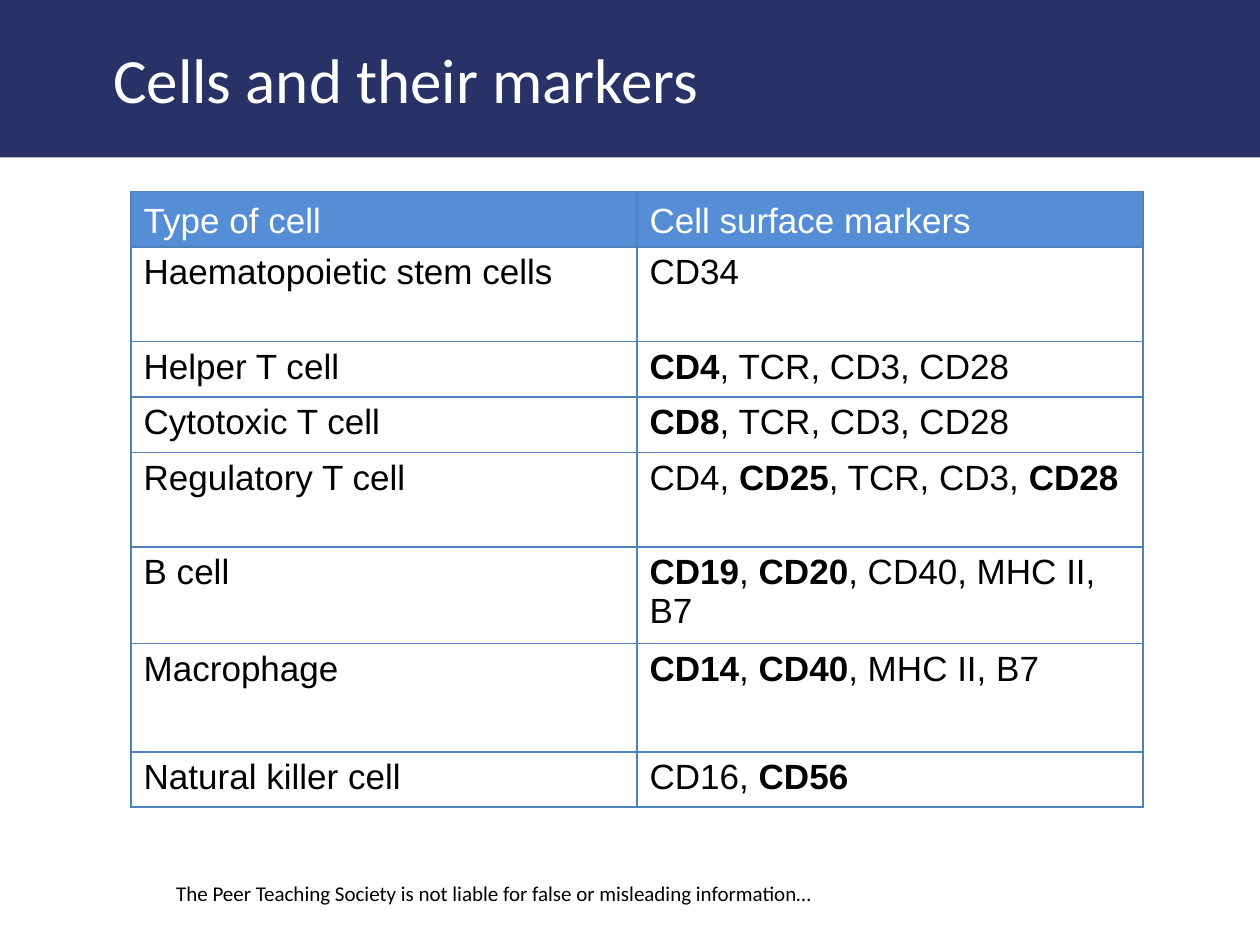
from dataclasses import dataclass

from lxml.etree import SubElement
from pptx import Presentation
from pptx.dml.color import RGBColor
from pptx.enum.shapes import MSO_SHAPE
from pptx.enum.text import MSO_ANCHOR
from pptx.oxml.ns import qn
from pptx.slide import Slide
from pptx.table import Table, _Cell
from pptx.text.text import Font
from pptx.util import Inches, Pt

COLORS = {
    "banner": "293267",
    "header": "558ED5",
    "border": "4F81BD",
    "light": "FFFFFF",
    "dark": "000000",
}
BOLD_MARK = "*"


@dataclass
class Label:
    text: str
    left: float
    top: float
    width: float
    height: float
    size: int
    color: str


@dataclass
class CellType:
    name: str
    markers: str
    height: float = 0.44


LABELS = [
    Label("The Peer Teaching Society is not liable for false or misleading information…",
          1.3, 6.94, 5.54, 0.3, 12, "dark"),
    Label("Cells and their markers", 0.8, 0.27, 5.11, 0.71, 36, "light"),
]
CELL_TYPES = [
    CellType("Type of cell", "Cell surface markers"),
    CellType("Haematopoietic stem cells", "CD34", 0.75),
    CellType("Helper T cell", "*CD4*, TCR, CD3, CD28"),
    CellType("Cytotoxic T cell", "*CD8*, TCR, CD3, CD28"),
    CellType("Regulatory T cell", "CD4, *CD25*, TCR, CD3, *CD28*", 0.75),
    CellType("B cell", "*CD19*, *CD20*, CD40, MHC II, B7", 0.75),
    CellType("Macrophage", "*CD14*, *CD40*, MHC II, B7", 0.86),
    CellType("Natural killer cell", "CD16, *CD56*"),
]


def rgb(color: str) -> RGBColor:
    return RGBColor.from_string(COLORS[color])


def style_font(font: Font, name: str, size: int, color: str, bold: bool = False) -> None:
    font.name = name
    font.size = Pt(size)
    font.bold = bold
    font.color.rgb = rgb(color)


def draw_banner(slide: Slide) -> None:
    banner = slide.shapes.add_shape(MSO_SHAPE.RECTANGLE, 0, 0, Inches(10), Inches(1.25))
    banner.shadow.inherit = False
    banner.fill.solid()
    banner.fill.fore_color.rgb = rgb("banner")
    banner.line.fill.background()


def draw_label(slide: Slide, label: Label) -> None:
    frame = slide.shapes.add_textbox(
        Inches(label.left), Inches(label.top), Inches(label.width), Inches(label.height)
    ).text_frame
    frame.word_wrap = True
    frame.text = label.text
    style_font(frame.paragraphs[0].runs[0].font, "Calibri", label.size, label.color)


def outline_cell(cell: _Cell) -> None:
    properties = cell._tc.get_or_add_tcPr()
    for position, side in enumerate(("lnL", "lnR", "lnT", "lnB")):
        edge = SubElement(properties, qn(f"a:{side}"), w=str(Pt(1)))
        properties.insert(position, edge)
        fill = SubElement(edge, qn("a:solidFill"))
        SubElement(fill, qn("a:srgbClr"), val=COLORS["border"])


def fill_cell(cell: _Cell, text: str, is_header: bool) -> None:
    paragraph = cell.text_frame.paragraphs[0]
    for position, part in enumerate(text.split(BOLD_MARK)):
        if part:
            run = paragraph.add_run()
            run.text = part
            style_font(run.font, "Arial", 20, "light" if is_header else "dark",
                       position % 2 == 1)
    if is_header:
        cell.vertical_anchor = MSO_ANCHOR.BOTTOM
        cell.fill.solid()
        cell.fill.fore_color.rgb = rgb("header")
    else:
        cell.fill.background()
    outline_cell(cell)


def draw_markers(slide: Slide, cell_types: list[CellType]) -> None:
    height = sum(cell_type.height for cell_type in cell_types)
    markers: Table = slide.shapes.add_table(
        len(cell_types), 2, Inches(1.04), Inches(1.52), Inches(8.03), Inches(height)
    ).table
    markers.first_row = False
    markers.horz_banding = False
    for index, cell_type in enumerate(cell_types):
        markers.rows[index].height = Inches(cell_type.height)
        for column, text in enumerate((cell_type.name, cell_type.markers)):
            fill_cell(markers.cell(index, column), text, index == 0)


def main() -> None:
    presentation = Presentation()
    presentation.slide_width = Inches(10)
    presentation.slide_height = Inches(7.5)
    slide = presentation.slides.add_slide(presentation.slide_layouts[6])
    draw_banner(slide)
    for label in LABELS:
        draw_label(slide, label)
    draw_markers(slide, CELL_TYPES)
    presentation.save("out.pptx")


if __name__ == "__main__":
    main()
